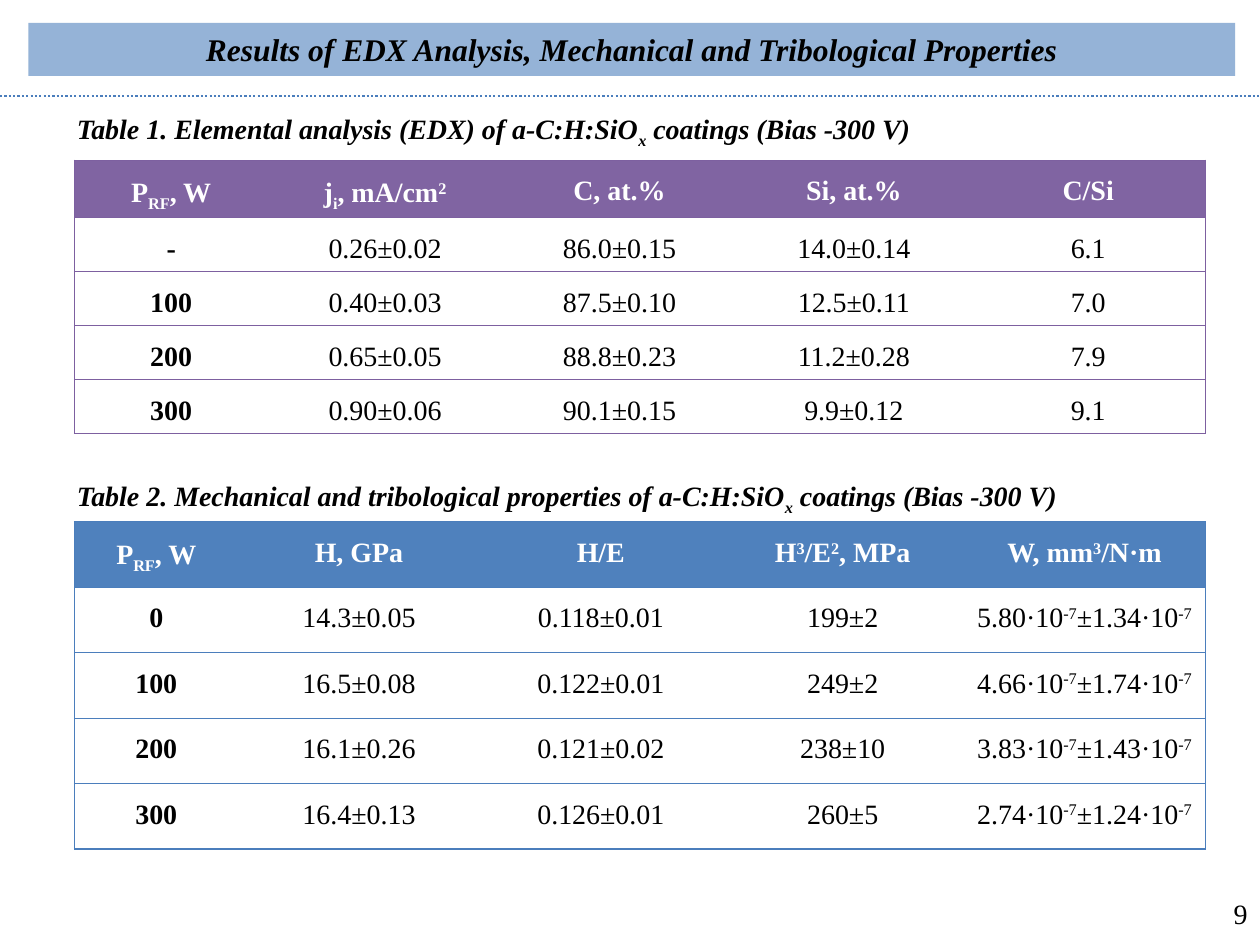
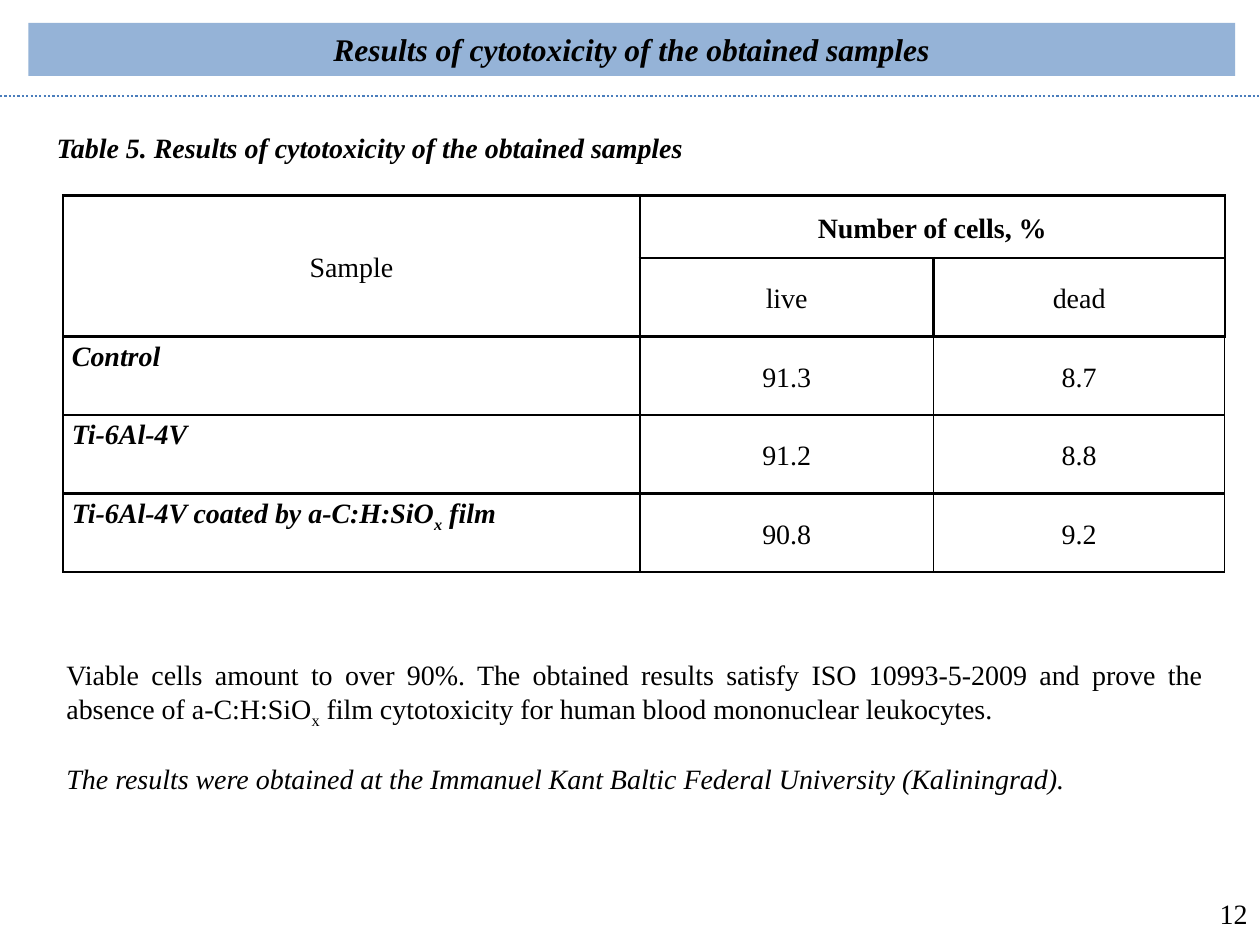
from dataclasses import dataclass
from itertools import product

from lxml import etree
from pptx import Presentation
from pptx.dml import color
from pptx.enum import dml, shapes, text as et
from pptx.oxml import ns
from pptx.util import Cm, Pt

ALIGN, ANCHOR = et.PP_ALIGN, et.MSO_ANCHOR
PLAIN_TABLE = "{2D5ABB26-0587-4C30-8999-92F81FD0307C}"
BASELINES = {"_": "-25000", "^": "30000"}


@dataclass(frozen=True)
class Theme:
    font: str = "Times New Roman"
    title_size: int = 18
    body_size: int = 16
    ink: str = "000000"
    paper: str = "FFFFFF"
    band: str = "95B3D7"
    rule: str = "4B7EBC"
    purple: str = "8064A2"
    purple_line: str = "7D60A0"
    blue: str = "4F81BD"


@dataclass(frozen=True)
class Box:
    """A region in centimetres."""
    left: float
    top: float
    width: float
    height: float

    def lengths(self):
        return [Cm(v) for v in (self.left, self.top, self.width, self.height)]


THEME = Theme()
SLIDE = Box(0, 0, 25.4, 19.05)


def rgb(value):
    return color.RGBColor.from_string(value)


def write(tf, content, size=THEME.body_size, ink=THEME.ink, bold=False, italic=False,
          align=ALIGN.LEFT, anchor=ANCHOR.TOP, spacing=None, before=0, add=False):
    """Write a paragraph; parts between bars are scripts: H|^3| is raised, P|_RF| lowered."""
    tf.word_wrap = True
    tf.vertical_anchor = anchor
    p = tf.add_paragraph() if add else tf.paragraphs[0]
    p.alignment = align
    p.space_before = Pt(before)
    if spacing:
        p.line_spacing = spacing
    for i, part in enumerate(content.split("|")):
        if not part:
            continue
        r = p.add_run()
        r.text = part[1:] if i % 2 else part
        f = r.font
        f.name, f.size, f.bold, f.italic = THEME.font, Pt(size), bold, italic
        f.color.rgb = rgb(ink)
        if i % 2:
            r._r.get_or_add_rPr().set("baseline", BASELINES[part[0]])


def add_text(slide, box, content, **fmt):
    tf = slide.shapes.add_textbox(*box.lengths()).text_frame
    write(tf, content, **fmt)
    return tf


def add_caption(slide, box, content, **fmt):
    add_text(slide, box, content, bold=True, italic=True, **fmt)


def set_borders(cell, line, **widths):
    """Draw the sides named L, R, T, B at their point widths; 0 hides a side."""
    tcPr = cell._tc.get_or_add_tcPr()
    for side in "LRTB":
        width = widths.get(side, 0)
        ln = etree.SubElement(tcPr, ns.qn(f"a:ln{side}"), w=str(Pt(width)))
        if width:
            fill = etree.SubElement(ln, ns.qn("a:solidFill"))
            etree.SubElement(fill, ns.qn("a:srgbClr"), val=line)
        else:
            etree.SubElement(ln, ns.qn("a:noFill"))


def add_grid(slide, box, col_widths, row_heights):
    """Add an unstyled table with its column widths and row heights."""
    table = slide.shapes.add_table(
        len(row_heights), len(col_widths), *box.lengths()).table
    table.first_row = table.horz_banding = False
    table._tbl.tblPr[0].text = PLAIN_TABLE
    for col, width in zip(table.columns, col_widths):
        col.width = Cm(width)
    for row, height in zip(table.rows, row_heights):
        row.height = Cm(height)
    for cell in table.iter_cells():
        cell.margin_left = cell.margin_right = Cm(0.18)
        cell.margin_top = cell.margin_bottom = 0
    return table


def add_property_table(slide, box, rows, first_col, head, line):
    """Ruled table with a coloured header and a bold first column."""
    n_rows, n_cols = len(rows), len(rows[0])
    other_col = (box.width - first_col) / (n_cols - 1)
    table = add_grid(slide, box, [first_col] + [other_col] * (n_cols - 1),
                     [box.height / n_rows] * n_rows)
    for i, j in product(range(n_rows), range(n_cols)):
        cell = table.cell(i, j)
        set_borders(cell, line, T=0.75, B=0.75, L=0.75 * (j == 0),
                    R=0.75 * (j == n_cols - 1))
        if i == 0:
            cell.fill.solid()
            cell.fill.fore_color.rgb = rgb(head)
        else:
            cell.fill.background()
        write(cell.text_frame, rows[i][j], align=ALIGN.CENTER, spacing=1.5,
              bold=i == 0 or j == 0, ink=THEME.ink if i else THEME.paper)


def add_cytotoxicity_table(slide, box, samples):
    head_row, live_col, dead_col = 1.26, 5.92, 5.87
    n_rows = len(samples) + 2
    row = (box.height - head_row) / (n_rows - 1)
    table = add_grid(slide, box, [box.width - live_col - dead_col, live_col, dead_col],
                     [head_row] + [row] * (n_rows - 1))
    table.cell(0, 0).merge(table.cell(1, 0))
    table.cell(0, 1).merge(table.cell(0, 2))
    rows = [("Sample", "Number of cells, %", ""), ("", "live", "dead"), *samples]
    for i, j in product(range(n_rows), range(3)):
        cell = table.cell(i, j)
        side = 1.5 if i < 2 else 1
        set_borders(cell, THEME.ink, L=side, R=side, T=1.5, B=side)
        cell.fill.background()
        if not rows[i][j]:
            continue
        is_name = i > 1 and j == 0
        write(cell.text_frame, rows[i][j], spacing=1.15, italic=is_name,
              bold=is_name or (i, j) == (0, 1),
              align=ALIGN.LEFT if is_name else ALIGN.CENTER)
        cell.vertical_anchor = ANCHOR.TOP if is_name else ANCHOR.MIDDLE


def add_frame(prs, title, number):
    """Add a slide with its title band, dotted rule and number."""
    slide = prs.slides.add_slide(prs.slide_layouts[5])
    sp = slide.shapes.title
    sp.left, sp.top, sp.width, sp.height = Box(0.57, 0.46, 24.33, 1.07).lengths()
    sp.fill.solid()
    sp.fill.fore_color.rgb = rgb(THEME.band)
    sp.text_frame.auto_size = et.MSO_AUTO_SIZE.NONE
    write(sp.text_frame, title, size=THEME.title_size, bold=True, italic=True,
          align=ALIGN.CENTER, anchor=ANCHOR.MIDDLE)

    rule = slide.shapes.add_connector(
        shapes.MSO_CONNECTOR.STRAIGHT, 0, Cm(1.93), Cm(SLIDE.width), Cm(1.93))
    rule.line.color.rgb = rgb(THEME.rule)
    rule.line.width = Pt(1.25)
    rule.line.dash_style = dml.MSO_LINE.ROUND_DOT
    etree.SubElement(rule._element.spPr, ns.qn("a:effectLst"))

    add_text(slide, Box(19.48, 17.91, 5.92, 1.02), str(number),
             align=ALIGN.RIGHT, anchor=ANCHOR.MIDDLE)
    return slide


def properties_slide(prs):
    slide = add_frame(
        prs, "Results of EDX Analysis, Mechanical and Tribological Properties", 9)
    add_caption(slide, Box(1.3, 2.13, 17.58, 0.94),
                "Table 1. Elemental analysis (EDX) of a-C:H:SiO|_x| coatings (Bias -300 V)")
    add_property_table(slide, Box(1.5, 3.23, 22.8, 5.44), [
        ("P|_RF|, W", "j|_i|, mA/cm|^2|", "C, at.%", "Si, at.%", "C/Si"),
        ("-", "0.26±0.02", "86.0±0.15", "14.0±0.14", "6.1"),
        ("100", "0.40±0.03", "87.5±0.10", "12.5±0.11", "7.0"),
        ("200", "0.65±0.05", "88.8±0.23", "11.2±0.28", "7.9"),
        ("300", "0.90±0.06", "90.1±0.15", "9.9±0.12", "9.1"),
    ], 3.9, THEME.purple, THEME.purple_line)
    add_caption(slide, Box(1.3, 9.53, 20.73, 0.94),
                "Table 2. Mechanical and tribological properties of a-C:H:SiO|_x|"
                " coatings (Bias -300 V)")
    add_property_table(slide, Box(1.5, 10.52, 22.8, 6.6), [
        ("P|_RF|, W", "H, GPa", "H/E", "H|^3|/E|^2|, MPa", "W, mm|^3|/N·m"),
        ("0", "14.3±0.05", "0.118±0.01", "199±2", "5.80·10|^-7|±1.34·10|^-7|"),
        ("100", "16.5±0.08", "0.122±0.01", "249±2", "4.66·10|^-7|±1.74·10|^-7|"),
        ("200", "16.1±0.26", "0.121±0.02", "238±10", "3.83·10|^-7|±1.43·10|^-7|"),
        ("300", "16.4±0.13", "0.126±0.01", "260±5", "2.74·10|^-7|±1.24·10|^-7|"),
    ], 3.3, THEME.blue, THEME.rule)


def cytotoxicity_slide(prs):
    heading = "Results of cytotoxicity of the obtained samples"
    slide = add_frame(prs, heading, 12)
    add_caption(slide, Box(0.89, 2.51, 23.39, 0.94), f"Table 5. {heading}",
                align=ALIGN.JUSTIFY, anchor=ANCHOR.MIDDLE)
    add_cytotoxicity_table(slide, Box(1.27, 3.94, 23.42, 7.59), [
        ("Control", "91.3", "8.7"),
        ("Ti-6Al-4V", "91.2", "8.8"),
        ("Ti-6Al-4V coated by a-C:H:SiO|_x| film", "90.8", "9.2"),
    ])
    tf = add_text(slide, Box(1.09, 13.13, 23.42, 3),
                  "Viable cells amount to over 90%. The obtained results satisfy "
                  "ISO 10993-5-2009 and prove the absence of a-C:H:SiO|_x| film "
                  "cytotoxicity for human blood mononuclear leukocytes.",
                  align=ALIGN.JUSTIFY)
    write(tf, "The results were obtained at the Immanuel Kant Baltic Federal "
          "University (Kaliningrad).", italic=True, align=ALIGN.JUSTIFY,
          before=18.4, add=True)


def main():
    prs = Presentation()
    prs.slide_width, prs.slide_height = Cm(SLIDE.width), Cm(SLIDE.height)
    properties_slide(prs)
    cytotoxicity_slide(prs)
    prs.save("out.pptx")


if __name__ == "__main__":
    main()
